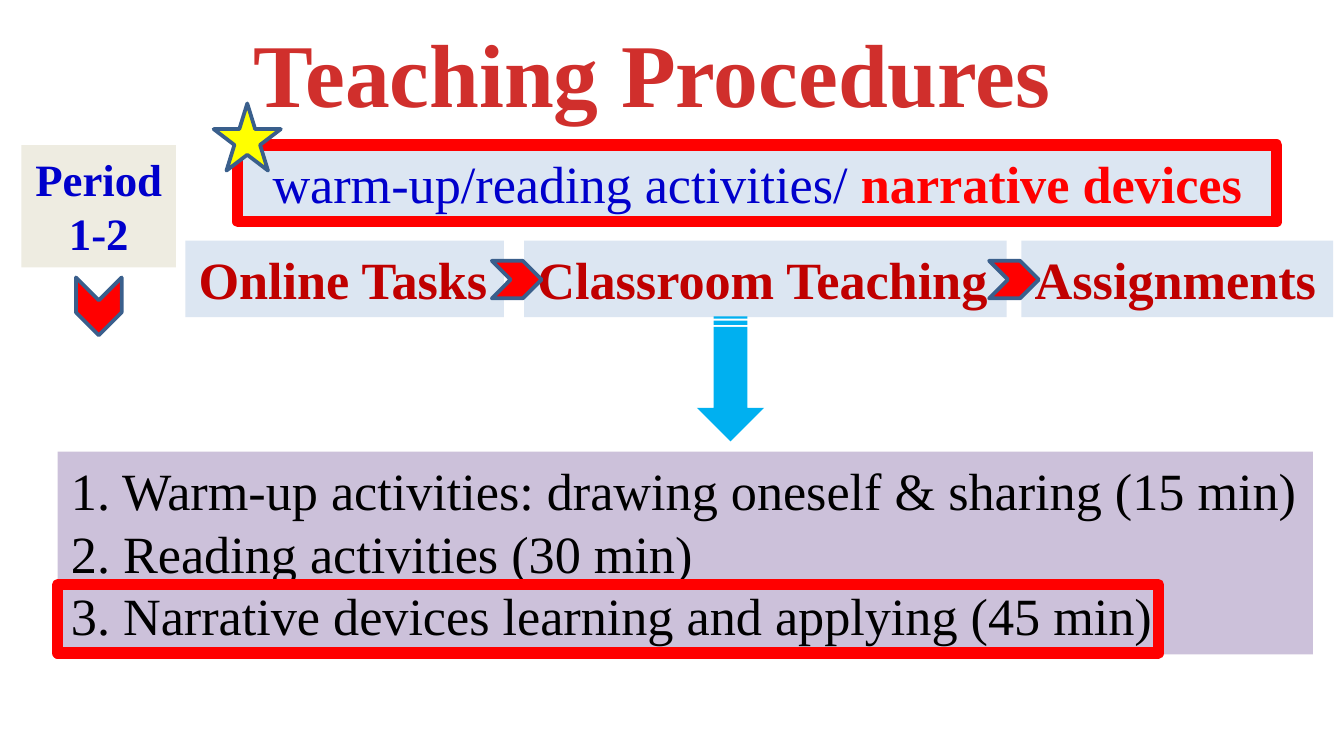
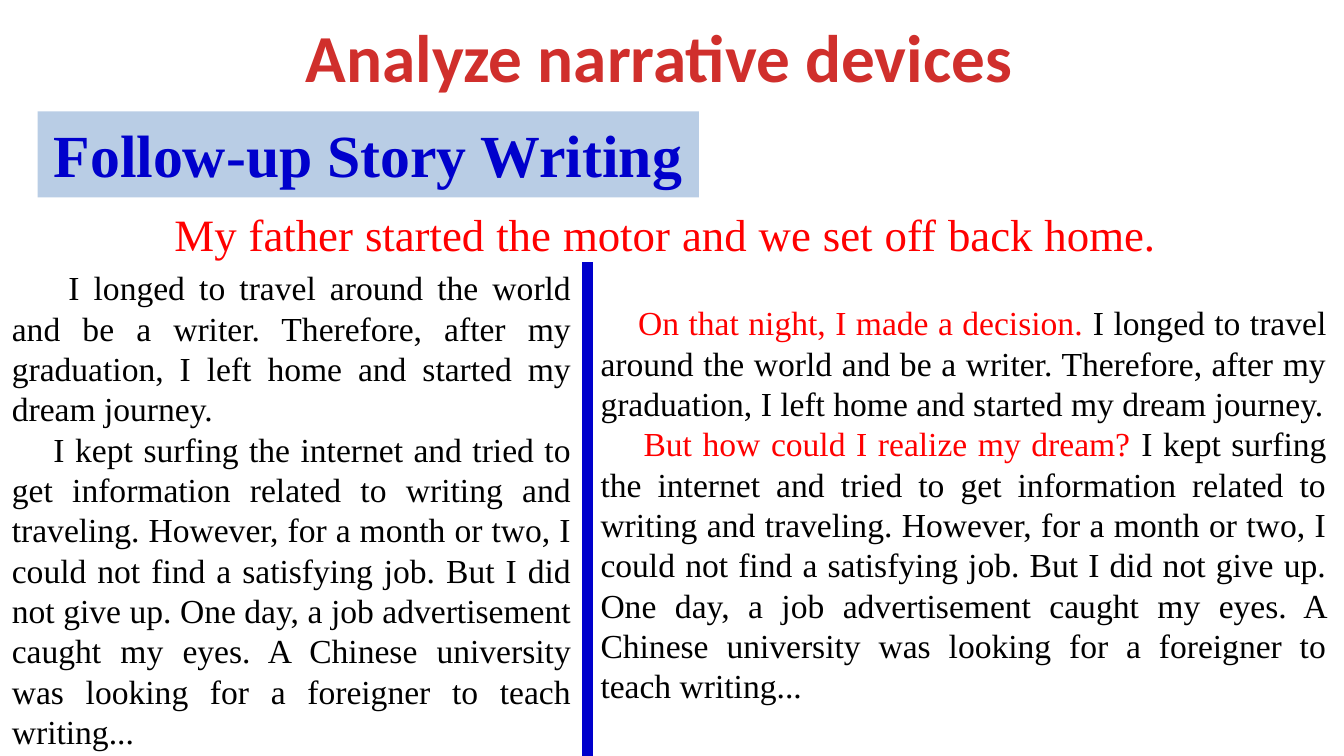
from lxml import etree
from pptx import Presentation
from pptx import util as u
from pptx.dml.color import RGBColor
from pptx.enum import shapes, text
from pptx.oxml import parse_xml
from pptx.oxml.ns import nsdecls, qn

PX = 9144
SERIF, SANS = "Times New Roman", "Calibri"
RED, BLUE, CRIMSON, BLACK = "FF0000", "0000CC", "C00000", "000000"
PALE_BLUE, OUTLINE = "DCE6F2", "3A5F8C"
TITLE_STOPS = [(0, "FC7C7A"), (75, "D02F2C"), (100, "C70500")]
CENTER, JUSTIFY = text.PP_ALIGN.CENTER, text.PP_ALIGN.JUSTIFY
PRESET = shapes.MSO_SHAPE

LONGED = ("I longed to travel around the world and be a writer. Therefore, after my graduation, "
          "I left home and started my dream journey.")
SURFING = ("I kept surfing the internet and tried to get information related to writing and traveling. "
           "However, for a month or two, I could not find a satisfying job. But I did not give up. "
           "One day, a job advertisement caught my eyes. A Chinese university was looking for "
           "a foreigner to teach writing...")


def px(*lengths):
    return [u.Emu(length * PX) for length in lengths]


def rgb(value):
    return RGBColor.from_string(value)


def paint(part, fill=None, line=None, width=0):
    if fill:
        part.fill.solid()
        part.fill.fore_color.rgb = rgb(fill)
    else:
        part.fill.background()
    if line:
        part.line.color.rgb = rgb(line)
        part.line.width = u.Pt(width)
    else:
        part.line.fill.background()


def style(paragraph, size, font=SERIF, color=None, bold=False, align=None):
    paragraph.font.size = u.Pt(size)
    paragraph.font.name = font
    paragraph.font.bold = bold
    if color:
        paragraph.font.color.rgb = rgb(color)
    if align is not None:
        paragraph.alignment = align


def add_title(slide, box, words, size, font, wrap):
    title = slide.shapes.title
    title.left, title.top, title.width, title.height = px(*box)
    frame = title.text_frame
    frame.text = words
    frame.word_wrap = wrap
    frame.auto_size = text.MSO_AUTO_SIZE.SHAPE_TO_FIT_TEXT
    paragraph = frame.paragraphs[0]
    style(paragraph, size, font, bold=True, align=CENTER)
    stops = "".join(f'<a:gs pos="{pos * 1000}"><a:srgbClr val="{color}"/></a:gs>'
                    for pos, color in TITLE_STOPS)
    gradient = parse_xml(f'<a:gradFill {nsdecls("a")}><a:gsLst>{stops}</a:gsLst>'
                         '<a:lin ang="5400000" scaled="0"/></a:gradFill>')
    paragraph.runs[0].font._element.insert(0, gradient)


def add_text(slide, box, paragraphs, size, color=None, bold=False, align=None,
             wrap=True, fill=None, line=None, width=0, indents=()):
    panel = slide.shapes.add_textbox(*px(*box))
    paint(panel, fill, line, width)
    frame = panel.text_frame
    frame.word_wrap = wrap
    frame.auto_size = text.MSO_AUTO_SIZE.SHAPE_TO_FIT_TEXT
    for number, content in enumerate(paragraphs):
        paragraph = frame.add_paragraph() if number else frame.paragraphs[0]
        style(paragraph, size, color=color, bold=bold, align=align)
        if indents:
            paragraph._p.get_or_add_pPr().set("indent", str(indents[number] * PX))
        if isinstance(content, str):
            paragraph.add_run().text = content
            continue
        for words, run_color, run_bold in content:
            run = paragraph.add_run()
            run.text = words
            run.font.color.rgb = rgb(run_color)
            run.font.bold = run_bold


def add_mark(slide, preset, box, fill=None, line=None, width=2, turn=0):
    mark = slide.shapes.add_shape(preset, *px(*box))
    mark.shadow.inherit = False
    mark.rotation = turn
    paint(mark, fill, line, width)


def period_label(slide, box):
    x, y, w, h = box
    add_text(slide, box, ["Period", "1-2"], 24, BLUE, True, CENTER, False, "EEECE1")
    add_mark(slide, PRESET.CHEVRON, (x + 36, y + h + 12, 43, 34), RED, OUTLINE, turn=90)


def focus_banner(slide, box):
    x, y, w, h = box
    add_text(slide, box, [[("warm-up/reading activities/ ", BLUE, False),
                           ("narrative devices", RED, True)]],
             28, align=CENTER, fill=PALE_BLUE, line=RED, width=6)
    add_mark(slide, PRESET.STAR_5_POINT, (x - 18, y - 31, 50, 50), "FFFF00", OUTLINE)


def stage_row(slide, box):
    x, y, w, h = box
    stages = [("Online Tasks", 0, 237), ("Classroom Teaching", 252, 359), ("Assignments", 622, 232)]
    for label, offset, width in stages:
        add_text(slide, (x + offset, y, width, h), [label], 28, CRIMSON, True, wrap=False, fill=PALE_BLUE)
    for label, offset, width in stages[1:]:
        add_mark(slide, PRESET.CHEVRON, (x + offset - 24, y + 15, 37, 28), RED, OUTLINE)


def activity_list(slide, box):
    x, y, w, h = box
    add_text(slide, box, ["1. Warm-up activities: drawing oneself & sharing (15 min)",
                          "2. Reading activities (30 min)",
                          "3. Narrative devices learning and applying (45 min)"],
             28, BLACK, fill="CCC1DA")
    add_mark(slide, PRESET.STRIPED_RIGHT_ARROW, (x + 454, y - 79, 93, 50), "00B0F0", turn=90)
    add_mark(slide, PRESET.RECTANGLE, (x, y + 99, 819, 51), line=RED, width=6)


def story_columns(slide, box):
    x, y, w, h = box
    divider_x = x + 438
    add_text(slide, (divider_x, y + 26, 560, 313),
             [[("On that night, I made a decision. ", RED, False), (LONGED, BLACK, False)],
              [("But how could I realize my dream? ", RED, False), (SURFING, BLACK, False)]],
             18, align=JUSTIFY, indents=(28, 32))
    divider = slide.shapes.add_connector(shapes.MSO_CONNECTOR.STRAIGHT,
                                         *px(divider_x, y + 1, divider_x, y + 371))
    divider.line.color.rgb = rgb(BLUE)
    divider.line.width = u.Pt(6)
    etree.SubElement(divider._element.spPr, qn("a:effectLst"))
    add_text(slide, (x, y, 436, h), [LONGED, SURFING], 18, BLACK, align=JUSTIFY, indents=(42, 31))


def procedures_slide(slide):
    add_title(slide, (176, 8, 619, 91), "Teaching Procedures", 48, SERIF, False)
    period_label(slide, (16, 108, 115, 91))
    focus_banner(slide, (177, 108, 773, 57))
    stage_row(slide, (138, 179, 854, 57))
    activity_list(slide, (43, 336, 934, 151))


def devices_slide(slide):
    add_title(slide, (12, 6, 968, 71), "Analyze narrative devices ", 36, SANS, True)
    add_text(slide, (28, 83, 492, 64), ["Follow-up Story Writing"], 32, BLUE, True,
             CENTER, False, "B9CDE5")
    add_text(slide, (120, 149, 750, 50), ["My father started the motor and we set off back home. "],
             24, RED, align=JUSTIFY)
    story_columns(slide, (-1, 194, 998, 373))


def main():
    deck = Presentation()
    deck.slide_width = u.Emu(1000 * PX)
    deck.slide_height = u.Emu(deck.slide_width * 9 // 16)
    for build in (procedures_slide, devices_slide):
        build(deck.slides.add_slide(deck.slide_layouts[5]))
    deck.save("out.pptx")


if __name__ == "__main__":
    main()
